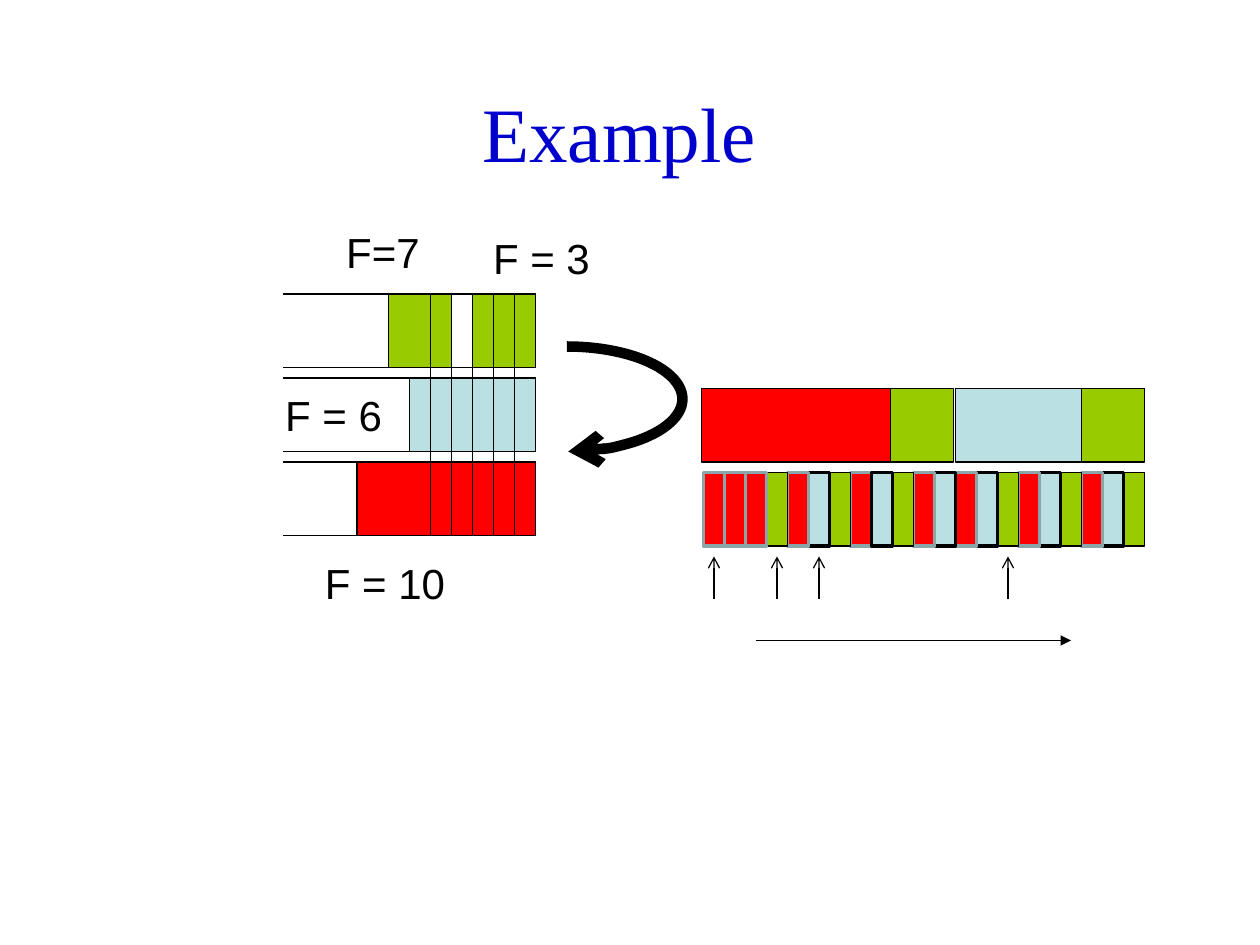
from lxml.etree import SubElement
from pptx import Presentation
from pptx.dml.color import RGBColor
from pptx.enum.shapes import MSO_CONNECTOR, MSO_SHAPE
from pptx.enum.text import MSO_ANCHOR, MSO_AUTO_SIZE, PP_ALIGN
from pptx.oxml.ns import qn
from pptx.util import Cm, Pt

COLORS = {"R": "FF0000", "G": "99CC00", "B": "BBE0E3",
          "black": "000000", "edge": "8AA6A8", "title": "0000CC"}
GRID = 2.54 / 12
BAR = 7


def grid(*values):
    return [Cm(v * GRID) for v in values]


def style(shape, color="black", width=0.75, fill=None, head=None):
    shape.line.color.rgb = RGBColor.from_string(COLORS[color])
    shape.line.width = Pt(width)
    if fill:
        shape.fill.solid()
        shape.fill.fore_color.rgb = RGBColor.from_string(COLORS[fill])
    if head:
        SubElement(shape.line._get_or_add_ln(), qn("a:tailEnd"), type=head)
    SubElement(shape._element.spPr, qn("a:effectLst"))


prs = Presentation()
prs.slide_width, prs.slide_height = Cm(25.4), Cm(19.05)
s = prs.slides.add_slide(prs.slide_layouts[5])

title = s.shapes.title
title.left, title.top, title.width, title.height = grid(8, 5, 102, 15)
tf = title.text_frame
tf.vertical_anchor = MSO_ANCHOR.MIDDLE
p = tf.paragraphs[0]
p.alignment = PP_ALIGN.CENTER
r = p.add_run()
r.text = "Example"
r.font.name, r.font.size = "Times New Roman", Pt(44)
r.font.color.rgb = RGBColor.from_string(COLORS["title"])

for x, y, w, fill in [(34, 44, 17, "R"), (37, 28, 6, "G"),
                      (45, 28, 6, "G"), (39, 36, 12, "B"),
                      (103, 37, 6, "G"), (91, 37, 12, "B"),
                      (84.8, 37, 6, "G"), (66.8, 37, 18, "R")]:
    sp = s.shapes.add_shape(MSO_SHAPE.RECTANGLE, *grid(x, y, w, BAR))
    style(sp, fill=fill)

for y in (28, 36, 44):
    queue = s.shapes.build_freeform(*grid(27, y))
    queue.add_line_segments([grid(51, y), grid(51, y + BAR), grid(27, y + BAR)], close=False)
    sp = queue.convert_to_shape()
    sp.fill.background()
    style(sp)

bend = s.shapes.build_freeform(*grid(54, 33))
bend.add_line_segments([grid(65, 38), grid(54.27, 43)], close=False)
sp = bend.convert_to_shape()
sp.fill.background()
style(sp, width=6, head="arrow")
outline = sp._element.xpath(".//a:path")[0]
for segment in outline.findall(qn("a:lnTo")):
    outline.remove(segment)
rx, ry = grid(11, 5)
SubElement(outline, qn("a:arcTo"), wR=str(rx), hR=str(ry), stAng="16200000", swAng="10716000")

lines = [(x, 28, x, 51, None) for x in range(49, 40, -2)]
lines += [(x, 57, x, 53, "arrow") for x in (68, 74, 78, 96)]
lines.append((72, 61, 102, 61, "triangle"))
for *ends, head in lines:
    line = s.shapes.add_connector(MSO_CONNECTOR.STRAIGHT, *grid(*ends))
    style(line, head=head)

for text, x, y, w in [("F = 10", 6.3, 11.11, 2.95), ("F = 3", 9.69, 4.56, 2.47),
                      ("F=7", 6.73, 4.45, 2.05), ("F = 6", 5.5, 7.72, 2.5)]:
    tf = s.shapes.add_textbox(Cm(x), Cm(y), Cm(w), Cm(1.27)).text_frame
    tf.word_wrap = False
    tf.auto_size = MSO_AUTO_SIZE.SHAPE_TO_FIT_TEXT
    r = tf.paragraphs[0].add_run()
    r.text = text
    r.font.name, r.font.size = "Arial", Pt(24)
    r.font.color.rgb = RGBColor.from_string(COLORS["black"])

schedule = "RRRGRBGRBGRBRBGRBGRBG"
borders = {"R": ("edge", 2), "G": ("black", 0.75), "B": ("black", 2)}
order = list(range(len(schedule)))[::-1]
first = order.index(8)
order[first:first + 2] = [7, 8]
for i in order:
    slot = schedule[i]
    sp = s.shapes.add_shape(MSO_SHAPE.RECTANGLE, *grid(67 + 2 * i, 45, 2, BAR))
    style(sp, *borders[slot], fill=slot)

prs.save("out.pptx")
